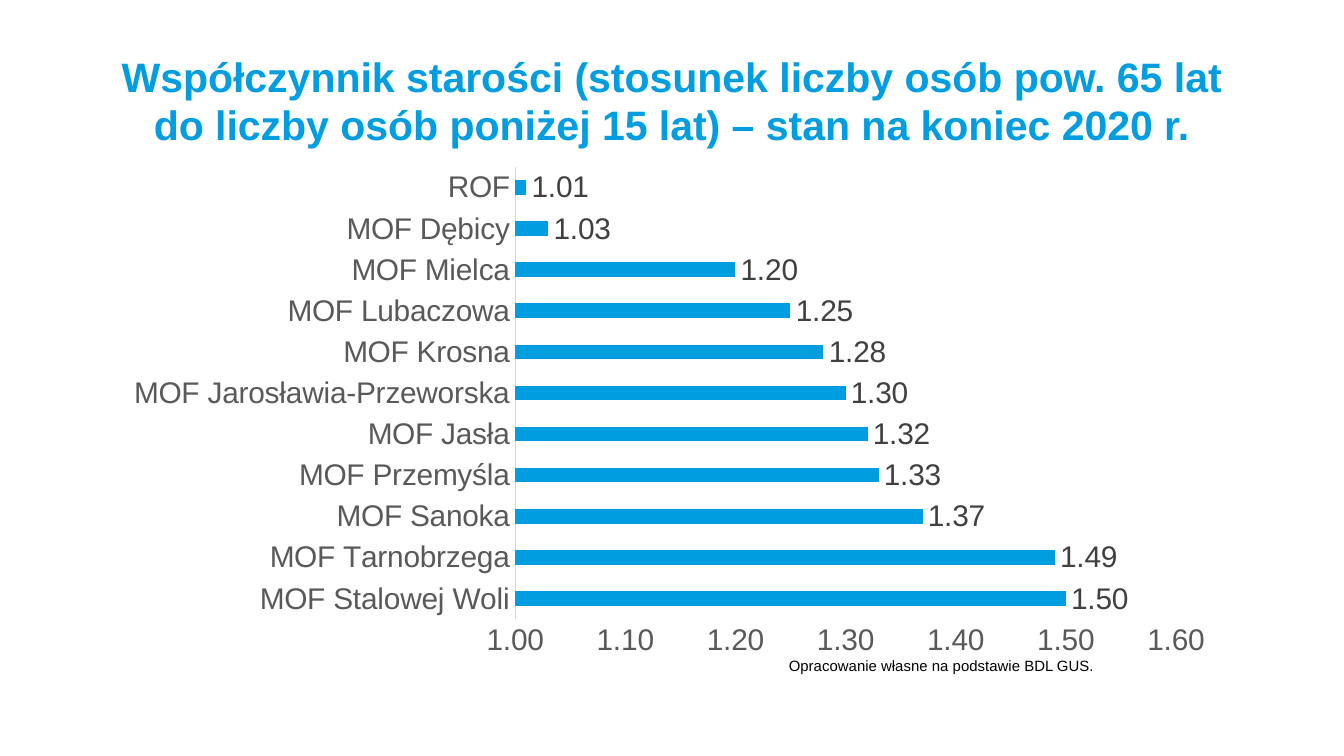
from lxml import etree
from pptx import Presentation
from pptx.chart.data import CategoryChartData
from pptx.dml.color import RGBColor
from pptx.enum import chart as ch, text
from pptx.oxml import parse_xml
from pptx.oxml.ns import nsdecls, qn
from pptx.util import Pt

PX = 9525  # EMU per px, 96 px to the inch
BLUE = RGBColor(0x00, 0x9D, 0xE0)
BLACK = RGBColor(0x00, 0x00, 0x00)
GREY = RGBColor(0x59, 0x59, 0x59)
DARK = RGBColor(0x40, 0x40, 0x40)
PALE = RGBColor(0xD9, 0xD9, 0xD9)

AGEING = [
    ("MOF Stalowej Woli", 1.50),
    ("MOF Tarnobrzega", 1.49),
    ("MOF Sanoka", 1.37),
    ("MOF Przemyśla", 1.33),
    ("MOF Jasła", 1.32),
    ("MOF Jarosławia-Przeworska", 1.30),
    ("MOF Krosna", 1.28),
    ("MOF Lubaczowa", 1.25),
    ("MOF Mielca", 1.20),
    ("MOF Dębicy", 1.03),
    ("ROF", 1.01),
]


class Deck:
    font = "Arial"
    chart_size = 16
    number_format = "0.00"

    def __init__(self, width, height):
        self.prs = Presentation()
        self.prs.slide_width, self.prs.slide_height = width * PX, height * PX
        self.s = self.prs.slides.add_slide(self.prs.slide_layouts[6])

    def style(self, font, size, color, bold=False):
        font.name, font.size, font.bold = self.font, Pt(size), bold
        font.color.rgb = color

    def text(self, box, words, size, color, bold=False, align=None,
             line=None, inset=None):
        sp = self.s.shapes.add_textbox(*(v * PX for v in box))
        tf = sp.text_frame
        tf.word_wrap = True
        if inset is not None:
            tf.margin_left = tf.margin_right = inset * PX
            tf.margin_top = tf.margin_bottom = inset * PX
        p = tf.paragraphs[0]
        p.alignment = align
        if line:
            p.line_spacing = Pt(line)
        r = p.add_run()
        r.text = words
        self.style(r.font, size, color, bold)
        return sp

    def axis(self, axis):
        axis.has_major_gridlines = False
        axis.major_tick_mark = axis.minor_tick_mark = ch.XL_TICK_MARK.NONE
        self.style(axis.tick_labels.font, self.chart_size, GREY)

    def plot_layout(self, chart, **parts):
        """Place the inner plot area as fractions of the chart."""
        area = chart._chartSpace.chart.plotArea
        for old in area.findall(qn("c:layout")):
            area.remove(old)
        layout = parse_xml(f"<c:layout {nsdecls('c')}><c:manualLayout/></c:layout>")
        settings = dict(layoutTarget="inner", xMode="edge", yMode="edge", **parts)
        for tag, value in settings.items():
            etree.SubElement(layout[0], qn(f"c:{tag}")).set("val", str(value))
        area.insert(0, layout)

    def bar_chart(self, box, rows, low, high, step):
        data = CategoryChartData(number_format=self.number_format)
        data.categories = [name for name, _ in rows]
        data.add_series("Series 1", [value for _, value in rows])
        chart = self.s.shapes.add_chart(
            ch.XL_CHART_TYPE.BAR_CLUSTERED, *(v * PX for v in box), data).chart
        chart.has_legend = chart.has_title = False
        self.style(chart.font, self.chart_size, BLACK)

        # Axes
        category, value = chart.category_axis, chart.value_axis
        self.axis(category)
        category.format.line.color.rgb = PALE
        category.format.line.width = Pt(0.75)
        self.axis(value)
        value.format.line.fill.background()
        value.minimum_scale, value.maximum_scale = low, high
        value.major_unit = step
        value.tick_labels.number_format = self.number_format
        value.tick_labels.number_format_is_linked = False

        # Bars and their values
        plot = chart.plots[0]
        plot.gap_width = 182
        plot.vary_by_categories = False
        bars = plot.series[0]
        bars.format.fill.solid()
        bars.format.fill.fore_color.rgb = BLUE
        labels = bars.data_labels
        labels.show_value = True
        labels.position = ch.XL_LABEL_POSITION.OUTSIDE_END
        labels.number_format = self.number_format
        labels.number_format_is_linked = False
        self.style(labels.font, self.chart_size, DARK)
        return chart


def main():
    deck = Deck(960, 540)

    # Title
    deck.text((80, 37, 800, 85),
              "Współczynnik starości (stosunek liczby osób pow. 65 lat "
              "do liczby osób poniżej 15 lat) – stan na koniec 2020 r.",
              22, BLUE, bold=True, align=text.PP_ALIGN.CENTER, line=26, inset=0)

    # Ageing ratio by functional area
    chart = deck.bar_chart((80, 112, 800, 363), AGEING, 1, 1.6, 0.1)
    deck.plot_layout(chart, x=0.36, y=0.02, w=0.59, h=0.89)

    # Source note
    note = deck.text((554, 464, 340, 23),
                     "Opracowanie własne na podstawie BDL GUS.", 8, BLACK)
    note.text_frame.auto_size = text.MSO_AUTO_SIZE.SHAPE_TO_FIT_TEXT

    deck.prs.save("out.pptx")


if __name__ == "__main__":
    main()
